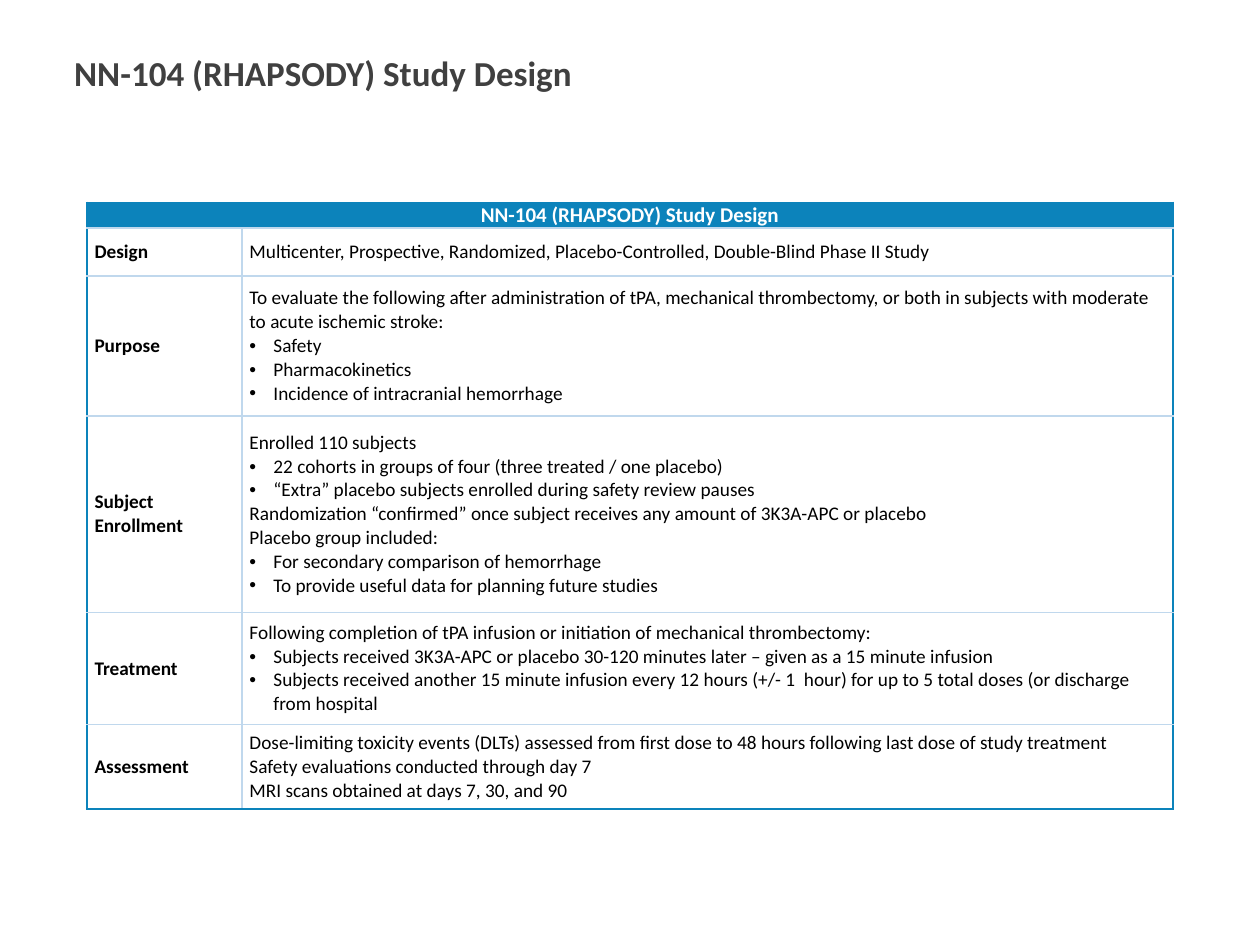
from lxml.etree import SubElement
from pptx import Presentation
from pptx.dml.color import RGBColor
from pptx.enum.text import MSO_ANCHOR, PP_ALIGN
from pptx.oxml.ns import qn
from pptx.util import Inches, Pt

COLORS = {"title": "404040", "accent": "0C83BB", "rule": "C0D8ED", "white": "FFFFFF", "black": "000000"}
FORMATS = {
    "title": {"size": Pt(20), "bold": True},
    "header": {"size": Pt(12), "bold": True},
    "label": {"size": Pt(11), "bold": True},
    "body": {"size": Pt(11), "bold": False},
}
OUTER, INNER = ("accent", 1.5), ("rule", 1)
BULLET = "• "
HEADING = "NN-104 (RHAPSODY) Study Design"
ROWS = [
    ("Design", 0.38, [
        "Multicenter, Prospective, Randomized, Placebo-Controlled, Double-Blind Phase II Study",
    ]),
    ("Purpose", 1.11, [
        "To evaluate the following after administration of tPA, mechanical thrombectomy, "
        "or both in subjects with moderate to acute ischemic stroke:",
        "• Safety",
        "• Pharmacokinetics",
        "• Incidence of intracranial hemorrhage",
    ]),
    ("Subject Enrollment", 1.56, [
        "Enrolled 110 subjects",
        "• 22 cohorts in groups of four (three treated / one placebo)",
        "• “Extra” placebo subjects enrolled during safety review pauses",
        "Randomization “confirmed” once subject receives any amount of 3K3A-APC or placebo",
        "Placebo group included:",
        "• For secondary comparison of hemorrhage",
        "• To provide useful data for planning future studies",
    ]),
    ("Treatment", 0.89, [
        "Following completion of tPA infusion or initiation of mechanical thrombectomy:",
        "• Subjects received 3K3A-APC or placebo 30-120 minutes later – given as a 15 minute infusion",
        "• Subjects received another 15 minute infusion every 12 hours (+/- 1  hour) "
        "for up to 5 total doses (or discharge from hospital",
    ]),
    ("Assessment", 0.67, [
        "Dose-limiting toxicity events (DLTs) assessed from first dose to 48 hours "
        "following last dose of study treatment",
        "Safety evaluations conducted through day 7",
        "MRI scans obtained at days 7, 30, and 90",
    ]),
]


def add_run(p, text, style, color):
    r = p.add_run()
    r.text = text
    r.font.name = "Calibri"
    r.font.color.rgb = RGBColor.from_string(COLORS[color])
    for name, value in FORMATS[style].items():
        setattr(r.font, name, value)


def set_bullet(p):
    pPr = p._p.get_or_add_pPr()
    pPr.set("marL", str(Inches(0.19)))
    pPr.set("indent", str(-Inches(0.19)))
    SubElement(pPr, qn("a:buFont"), typeface="Arial")
    SubElement(pPr, qn("a:buChar"), char=BULLET.strip())


def set_borders(cell, **borders):
    tcPr = cell._tc.get_or_add_tcPr()
    for side in "LRTB":
        if side not in borders:
            continue
        color, width = borders[side]
        ln = SubElement(tcPr, qn(f"a:ln{side}"), w=str(Pt(width)))
        fill = SubElement(ln, qn("a:solidFill"))
        SubElement(fill, qn("a:srgbClr"), val=COLORS[color])


def fill_cell(cell, lines, style, color="black", align=PP_ALIGN.LEFT):
    cell.vertical_anchor = MSO_ANCHOR.MIDDLE
    cell.margin_left = cell.margin_right = Inches(0.06)
    cell.margin_top = cell.margin_bottom = 0
    tf = cell.text_frame
    for i, line in enumerate(lines):
        p = tf.add_paragraph() if i else tf.paragraphs[0]
        p.alignment = align
        if line.startswith(BULLET):
            set_bullet(p)
        add_run(p, line.removeprefix(BULLET), style, color)


def add_title(s, left, top, width, height):
    tf = s.shapes.add_textbox(left, top, width, height).text_frame
    tf.word_wrap = True
    tf.vertical_anchor = MSO_ANCHOR.TOP
    p = tf.paragraphs[0]
    p.line_spacing = 0.9
    add_run(p, HEADING, "title", "title")


def add_design_table(s, left, top, width, height):
    table = s.shapes.add_table(len(ROWS) + 1, 2, left, top, width, height).table
    table.horz_banding = False
    label_width = Inches(1.23)
    table.columns[0].width = label_width
    table.columns[1].width = width - label_width
    table.rows[0].height = height - sum(Inches(row[1]) for row in ROWS)

    header = table.cell(0, 0)
    header.merge(table.cell(0, 1))
    fill_cell(header, [HEADING], "header", "white", PP_ALIGN.CENTER)
    set_borders(header, L=OUTER, R=OUTER, T=OUTER)
    set_borders(table.cell(0, 1), R=OUTER, T=OUTER)
    for cell in (header, table.cell(0, 1)):
        cell.fill.solid()
        cell.fill.fore_color.rgb = RGBColor.from_string(COLORS["accent"])

    for i, (label, row_height, lines) in enumerate(ROWS, 1):
        table.rows[i].height = Inches(row_height)
        name, body = table.cell(i, 0), table.cell(i, 1)
        fill_cell(name, [label], "label")
        fill_cell(body, lines, "body")
        bottom = OUTER if i == len(ROWS) else INNER
        set_borders(name, L=OUTER, R=INNER, T=INNER, B=bottom)
        set_borders(body, L=INNER, R=OUTER, T=INNER, B=bottom)
        for cell in (name, body):
            cell.fill.background()


def main():
    prs = Presentation()
    prs.slide_width, prs.slide_height = Inches(10), Inches(7.5)
    s = prs.slides.add_slide(prs.slide_layouts[6])
    add_title(s, Inches(0.49), Inches(0.4), Inches(9.01), Inches(0.77))
    add_design_table(s, Inches(0.69), Inches(1.61), Inches(8.62), Inches(4.81))
    prs.save("out.pptx")


if __name__ == "__main__":
    main()
